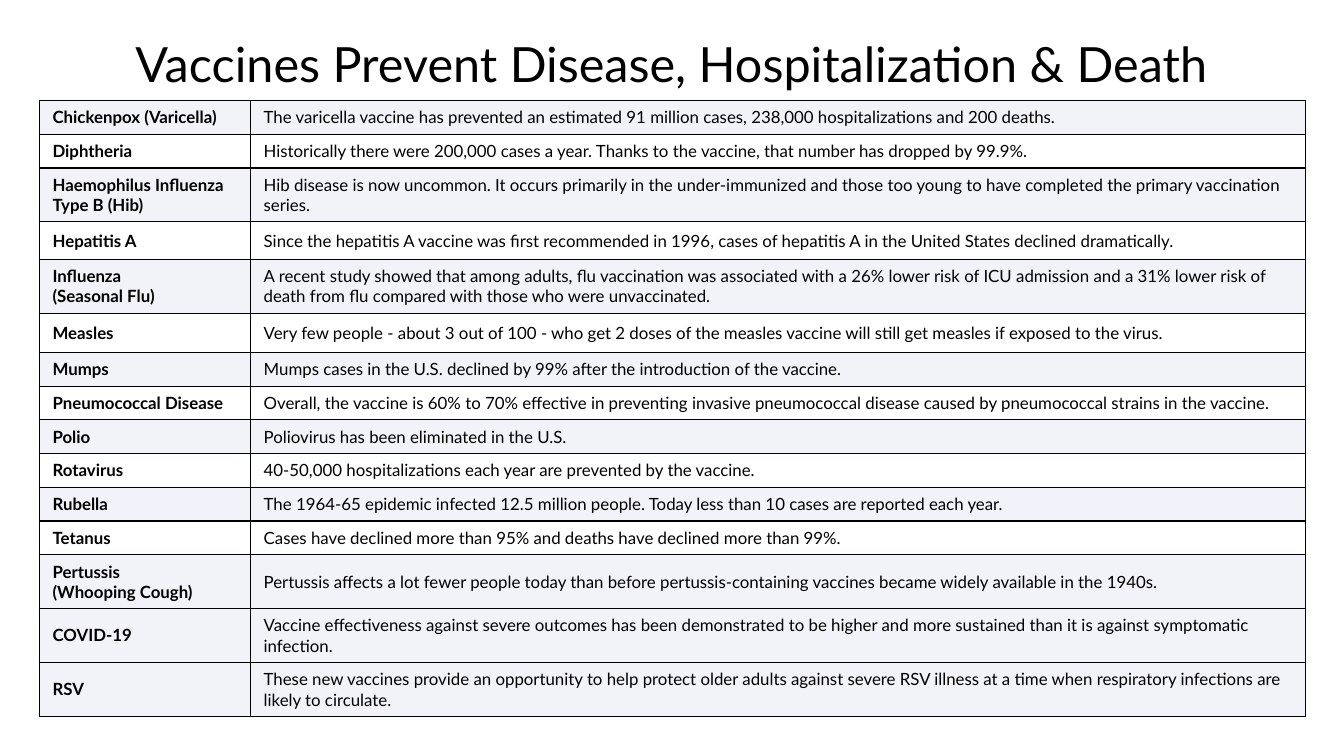
from dataclasses import dataclass

from lxml.etree import SubElement
from pptx import Presentation
from pptx.dml.color import RGBColor
from pptx.enum.text import MSO_ANCHOR, PP_ALIGN
from pptx.oxml.ns import qn
from pptx.util import Cm, Pt


@dataclass(frozen=True)
class Theme:
    font: str = "Lato"
    ink: str = "000000"
    stripe: str = "DFE2F1"
    stripe_opacity: int = 40
    title_size: int = 26
    body_size: int = 9
    border_width: float = 0.75


THEME = Theme()

ONE_LINE, TWO_LINES = 0.63, 1.01
FACTS = [
    ("Chickenpox (Varicella)", ONE_LINE,
     "The varicella vaccine has prevented an estimated 91 million cases, 238,000 hospitalizations and 200 deaths."),
    ("Diphtheria", ONE_LINE,
     "Historically there were 200,000 cases a year. Thanks to the vaccine, that number has dropped by 99.9%."),
    ("Haemophilus Influenza Type B (Hib)", TWO_LINES,
     "Hib disease is now uncommon. It occurs primarily in the under-immunized and those too young to have "
     "completed the primary vaccination series."),
    ("Hepatitis A", 0.71,
     "Since the hepatitis A vaccine was first recommended in 1996, cases of hepatitis A in the United States "
     "declined dramatically."),
    ("Influenza\n(Seasonal Flu)", TWO_LINES,
     "A recent study showed that among adults, flu vaccination was associated with a 26% lower risk of ICU "
     "admission and a 31% lower risk of death from flu compared with those who were unvaccinated."),
    ("Measles", 0.74,
     "Very few people - about 3 out of 100 - who get 2 doses of the measles vaccine will still get measles if "
     "exposed to the virus."),
    ("Mumps", ONE_LINE,
     "Mumps cases in the U.S. declined by 99% after the introduction of the vaccine."),
    ("Pneumococcal Disease", ONE_LINE,
     "Overall, the vaccine is 60% to 70% effective in preventing invasive pneumococcal disease caused by "
     "pneumococcal strains in the vaccine."),
    ("Polio", ONE_LINE, "Poliovirus has been eliminated in the U.S."),
    ("Rotavirus", ONE_LINE, "40-50,000 hospitalizations each year are prevented by the vaccine."),
    ("Rubella", ONE_LINE,
     "The 1964-65 epidemic infected 12.5 million people. Today less than 10 cases are reported each year."),
    ("Tetanus", ONE_LINE, "Cases have declined more than 95% and deaths have declined more than 99%."),
    ("Pertussis\n(Whooping Cough)", TWO_LINES,
     "Pertussis affects a lot fewer people today than before pertussis-containing vaccines became widely "
     "available in the 1940s."),
    ("COVID-19", TWO_LINES,
     "Vaccine effectiveness against severe outcomes has been demonstrated to be higher and more sustained than "
     "it is against symptomatic infection."),
    ("RSV", TWO_LINES,
     "These new vaccines provide an opportunity to help protect older adults against severe RSV illness at a "
     "time when respiratory infections are likely to circulate."),
]
# Rows alternate up to this one; from here on every row is tinted.
FIRST_ALWAYS_TINTED = 12


def write_text(frame, text, size, bold=False, align=PP_ALIGN.LEFT):
    for index, line in enumerate(text.split("\n")):
        paragraph = frame.add_paragraph() if index else frame.paragraphs[0]
        paragraph.alignment = align
        run = paragraph.add_run()
        run.text = line
        run.font.name = THEME.font
        run.font.size = Pt(size)
        run.font.bold = bold
        run.font.color.rgb = RGBColor.from_string(THEME.ink)


def add_borders(cell):
    properties = cell._tc.get_or_add_tcPr()
    for side in ("a:lnL", "a:lnR", "a:lnT", "a:lnB"):
        line = SubElement(properties, qn(side), w=str(Pt(THEME.border_width)))
        SubElement(SubElement(line, qn("a:solidFill")), qn("a:srgbClr"), val=THEME.ink)


def tint(cell):
    """Fill the cell with the see-through stripe colour."""
    cell.fill.solid()
    cell.fill.fore_color.rgb = RGBColor.from_string(THEME.stripe)
    color = cell._tc.tcPr.find(qn("a:solidFill")).find(qn("a:srgbClr"))
    SubElement(color, qn("a:alpha"), val=str(THEME.stripe_opacity * 1000))


def add_title(slide, left, top, width, height):
    frame = slide.shapes.add_textbox(left, top, width, height).text_frame
    frame.word_wrap = True
    frame.vertical_anchor = MSO_ANCHOR.MIDDLE
    write_text(frame, "Vaccines Prevent Disease, Hospitalization & Death",
               THEME.title_size, align=PP_ALIGN.CENTER)


def add_fact_table(slide, left, top, width, height):
    table = slide.shapes.add_table(len(FACTS), 2, left, top, width, height).table
    table.first_row = table.horz_banding = False
    disease_column, fact_column = table.columns
    disease_column.width = Cm(3.99)
    fact_column.width = width - disease_column.width

    for index, (disease, row_height, fact) in enumerate(FACTS):
        table.rows[index].height = Cm(row_height)
        tinted = index % 2 == 0 or index >= FIRST_ALWAYS_TINTED
        for column, text in enumerate((disease, fact)):
            cell = table.cell(index, column)
            cell.vertical_anchor = MSO_ANCHOR.MIDDLE
            write_text(cell.text_frame, text, THEME.body_size, bold=column == 0)
            add_borders(cell)
            if tinted:
                tint(cell)
            else:
                cell.fill.background()


def main():
    presentation = Presentation()
    presentation.slide_width, presentation.slide_height = Cm(25.4), Cm(14.29)
    slide = presentation.slides.add_slide(presentation.slide_layouts[6])
    add_title(slide, Cm(0), Cm(0.48), presentation.slide_width, Cm(1.42))
    add_fact_table(slide, Cm(0.74), Cm(1.9), Cm(23.93), Cm(11.61))
    presentation.save("out.pptx")


if __name__ == "__main__":
    main()
